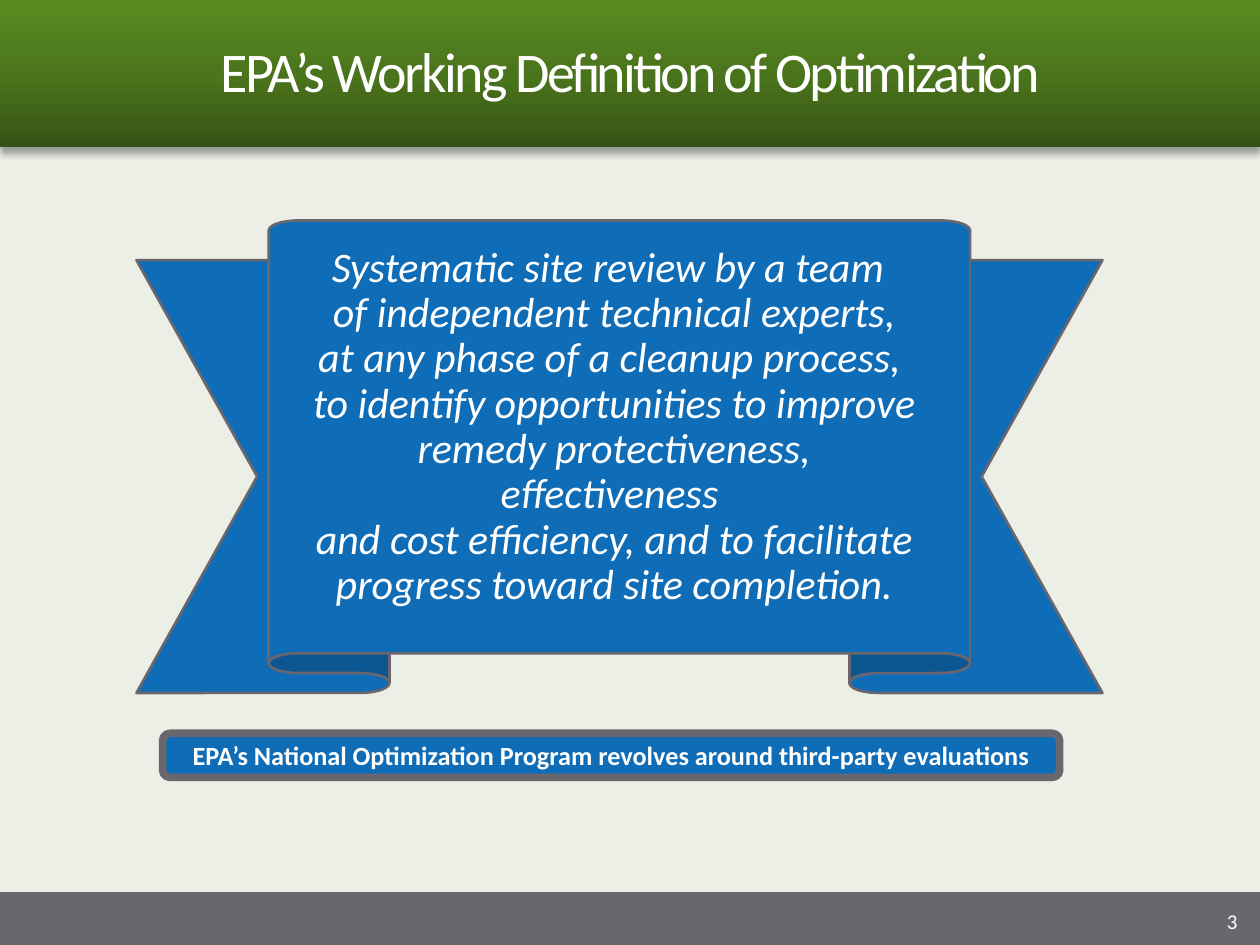
from copy import deepcopy
from typing import NamedTuple

from lxml.etree import fromstring
from pptx import Presentation
from pptx.dml.color import RGBColor
from pptx.enum.shapes import MSO_SHAPE as Preset
from pptx.enum.text import MSO_ANCHOR as Anchor, MSO_AUTO_SIZE as AutoSize, PP_ALIGN as Align
from pptx.oxml.ns import nsdecls, qn
from pptx.util import Inches, Pt

WHITE = RGBColor(0xFF, 0xFF, 0xFF)
PALE = RGBColor(0xEB, 0xEF, 0xE6)
GRAY = RGBColor(0x69, 0x67, 0x6D)
BLUE = RGBColor(0x0F, 0x6C, 0xB6)
GREENS = (RGBColor(0x35, 0x52, 0x14), RGBColor(0x4B, 0x75, 0x1C), RGBColor(0x59, 0x8B, 0x21))

DEFINITION = (
    "Systematic site review by a team\n"
    "of independent technical experts,\n"
    "at any phase of a cleanup process, \n"
    "to identify opportunities to improve remedy protectiveness, effectiveness \n"
    "and cost efficiency, and to facilitate progress toward site completion."
)


class Box(NamedTuple):
    """A rectangle whose areas are given in percent of its size."""

    left: int
    top: int
    width: int
    height: int

    def area(self, x, y, w, h):
        """Return the sub-rectangle at the given percentages."""
        return Box(
            round(self.left + self.width * x / 100),
            round(self.top + self.height * y / 100),
            round(self.width * w / 100),
            round(self.height * h / 100),
        )


def set_attributes(target, values):
    """Set each attribute of the target from a dict."""
    for name, value in values.items():
        setattr(target, name, value)


def shadow_effect(opacity, blur, distance, angle):
    """Return an effect list holding a black outer shadow."""
    return fromstring(
        f'<a:effectLst {nsdecls("a")}><a:outerShdw blurRad="{Pt(blur)}" dist="{Pt(distance)}" '
        f'dir="{angle * 60000}" rotWithShape="0"><a:srgbClr val="000000">'
        f'<a:alpha val="{opacity * 1000}"/></a:srgbClr></a:outerShdw></a:effectLst>'
    )


def write(shape, text, size, align=Align.CENTER, frame=None, spacing=None, **font):
    """Write one formatted paragraph into a shape and return it."""
    text_frame = shape.text_frame
    set_attributes(text_frame, {"word_wrap": True, "auto_size": AutoSize.NONE,
                                "vertical_anchor": Anchor.MIDDLE, **(frame or {})})
    paragraph = text_frame.paragraphs[0]
    paragraph.text = text
    set_attributes(paragraph, {"alignment": align, **(spacing or {})})
    for run in paragraph.runs:
        set_attributes(run.font, {"name": "Calibri", "size": Pt(size), **font})
        run.font.color.rgb = WHITE
    return paragraph


def add_panel(slide, preset, box, fill, border=None):
    """Add a preset shape with a plain fill and an optional gray border."""
    panel = slide.shapes.add_shape(preset, *box)
    panel.shadow.inherit = False
    panel.fill.solid()
    panel.fill.fore_color.rgb = fill
    if border:
        panel.line.color.rgb = GRAY
        panel.line.width = Pt(border)
    else:
        panel.line.fill.background()
    return panel


def add_bar(slide, box, fill):
    """Add a full-width bar that casts a soft shadow downward."""
    bar = add_panel(slide, Preset.RECTANGLE, box, fill)
    effects = bar.element.spPr.find(qn("a:effectLst"))
    effects.getparent().replace(effects, shadow_effect(35, 4, 3, 90))
    return bar


def add_header(slide, box, heading):
    """Place the green gradient bar and the title on it."""
    bar = add_bar(slide, box, GREENS[0])
    bar.fill.gradient()
    bar.fill.gradient_angle = 90
    first_stop = bar.element.spPr.find(".//" + qn("a:gs"))
    first_stop.addnext(deepcopy(first_stop))
    for index, (stop, green) in enumerate(zip(bar.fill.gradient_stops, GREENS)):
        stop.position = index / 2
        stop.color.rgb = green

    title = slide.shapes.title
    left, top, width, height = box.area(4.2, 29.9, 91.7, 41)
    set_attributes(title, {"left": left, "top": top, "width": width, "height": height})
    margins = dict.fromkeys(("margin_left", "margin_top", "margin_right", "margin_bottom"), 0)
    paragraph = write(title, heading, 32, frame=margins, spacing={"line_spacing": 0.9})
    properties = paragraph.runs[0]._r.get_or_add_rPr()
    properties.set("spc", "-150")
    properties.find(qn("a:solidFill")).addnext(shadow_effect(70, 4, 3, 45))
    bar.element.addnext(title.element)


def add_footer(slide, box, number):
    """Place the gray bar and the slide number at its right end."""
    add_bar(slide, box, GRAY)
    label = slide.shapes.add_textbox(*box.area(91.7, 10, 7.5, 90))
    write(label, number, 12, Align.RIGHT)


def add_definition(slide, box, definition):
    """Place the ribbon and the definition on its centre panel."""
    ribbon = add_panel(slide, Preset.UP_RIBBON, box, BLUE, 1.5)
    ribbon.adjustments[0] = 0.084
    ribbon.adjustments[1] = 0.726
    label = slide.shapes.add_textbox(*box.area(16.6, 4.27, 64.4, 85.07))
    frame = {"vertical_anchor": Anchor.TOP, "margin_left": 0, "margin_right": 0,
             "margin_top": Inches(0.04), "margin_bottom": Inches(0.04)}
    spacing = {"line_spacing": 0.9, "space_after": Pt(2)}
    paragraph = write(label, definition, 24, frame=frame, spacing=spacing, italic=True)
    indent = Inches(0.1)
    properties = paragraph._p.get_or_add_pPr()
    properties.set("marL", str(indent))
    properties.set("indent", str(-indent))


def add_callout(slide, box, statement):
    """Place the rounded box with the closing statement."""
    callout = add_panel(slide, Preset.ROUNDED_RECTANGLE, box, BLUE, 4.33)
    write(callout, statement, 15, bold=True)


def main():
    """Build the slide and save it."""
    deck = Presentation()
    deck.slide_width, deck.slide_height = Inches(10), Inches(7.5)
    slide = deck.slides.add_slide(deck.slide_layouts.get_by_name("Title Only"))
    slide.background.fill.solid()
    slide.background.fill.fore_color.rgb = PALE
    page = Box(0, 0, deck.slide_width, deck.slide_height)

    add_header(slide, page.area(0, 0, 100, 15.6), "EPA’s Working Definition of Optimization")
    add_footer(slide, page.area(0, 94.4, 100, 5.6), "3")
    add_definition(slide, page.area(10.83, 23.33, 76.67, 50), DEFINITION)
    add_callout(slide, page.area(12.9, 77.6, 71.2, 4.67),
                "EPA’s National Optimization Program revolves around third-party evaluations")
    deck.save("out.pptx")


if __name__ == "__main__":
    main()
